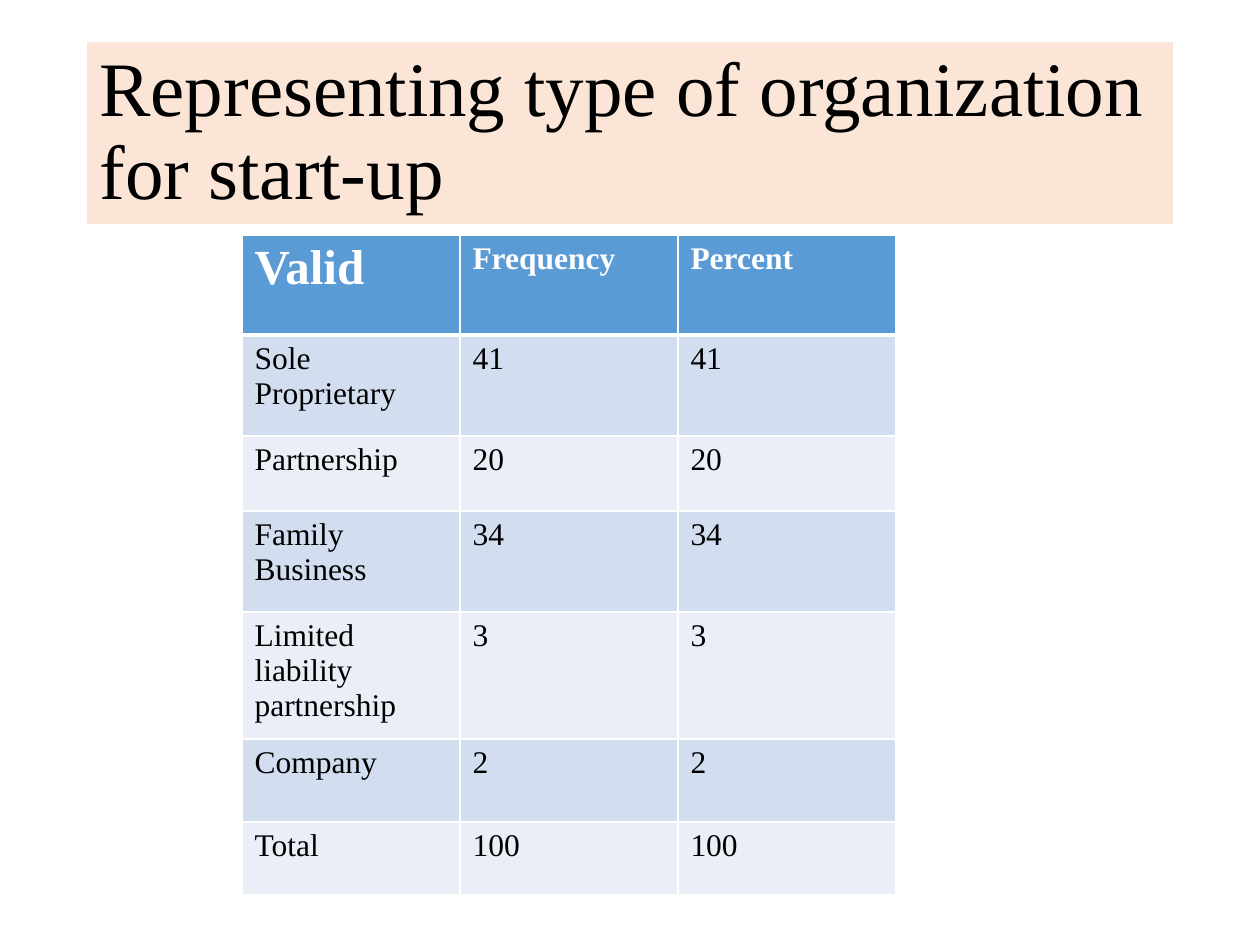
from dataclasses import dataclass

from lxml import etree
from pptx import Presentation
from pptx import util as u
from pptx.dml.color import RGBColor
from pptx.enum import text
from pptx.oxml.ns import qn

PX = u.Inches(1) / 126  # one px in EMU
FONT = "Times New Roman"
BLACK = RGBColor(0x00, 0x00, 0x00)
WHITE = RGBColor(0xFF, 0xFF, 0xFF)
PEACH = RGBColor(0xFB, 0xE5, 0xD6)
BLUE = RGBColor(0x5B, 0x9B, 0xD5)
BANDS = (RGBColor(0xD2, 0xDE, 0xEF), RGBColor(0xEA, 0xEF, 0xF7))

COLUMN_WIDTH = 218


@dataclass(frozen=True)
class Row:
    height: int
    labels: tuple[str, str, str]


ROWS = (
    Row(100, ("Valid", "Frequency", "Percent")),
    Row(101, ("Sole Proprietary", "41", "41")),
    Row(75, ("Partnership", "20", "20")),
    Row(101, ("Family Business", "34", "34")),
    Row(127, ("Limited liability partnership", "3", "3")),
    Row(83, ("Company", "2", "2")),
    Row(73, ("Total", "100", "100")),
)


def px(length: int) -> u.Emu:
    return u.Emu(round(length * PX))


def format_paragraph(paragraph, size: int, color: RGBColor, bold: bool = False) -> None:
    font = paragraph.font
    font.name, font.size, font.bold = FONT, u.Pt(size), bold
    font.color.rgb = color


def add_borders(cell, bottom: int) -> None:
    """Give a cell white rules, with its own bottom width in points."""
    properties = cell._tc.get_or_add_tcPr()
    widths = {"a:lnL": 1, "a:lnR": 1, "a:lnT": 1, "a:lnB": bottom}
    for index, (tag, width) in enumerate(widths.items()):
        line = etree.Element(qn(tag), w=str(u.Pt(width)))
        fill = etree.SubElement(line, qn("a:solidFill"))
        etree.SubElement(fill, qn("a:srgbClr"), val=str(WHITE))
        properties.insert(index, line)


def add_title(slide, wording: str) -> None:
    title = slide.shapes.title
    title.left, title.top, title.width, title.height = map(px, (87, 42, 1086, 182))
    title.fill.solid()
    title.fill.fore_color.rgb = PEACH
    frame = title.text_frame
    frame.text = wording
    frame.word_wrap = True
    frame.auto_size = text.MSO_AUTO_SIZE.NONE
    frame.vertical_anchor = text.MSO_ANCHOR.MIDDLE
    paragraph = frame.paragraphs[0]
    paragraph.alignment = text.PP_ALIGN.LEFT
    paragraph.line_spacing = 0.9
    format_paragraph(paragraph, 44, BLACK)


def add_frequencies(slide, rows: tuple[Row, ...]) -> None:
    columns = len(rows[0].labels)
    height = sum(row.height for row in rows)
    table = slide.shapes.add_table(
        len(rows), columns, px(242), px(235), px(columns * COLUMN_WIDTH), px(height)
    ).table
    for column in table.columns:
        column.width = px(COLUMN_WIDTH)
    for r, row in enumerate(rows):
        table.rows[r].height = px(row.height)
        header = r == 0
        for c, label in enumerate(row.labels):
            cell = table.cell(r, c)
            cell.text = label
            cell.fill.solid()
            cell.fill.fore_color.rgb = BLUE if header else BANDS[(r - 1) % 2]
            add_borders(cell, bottom=3 if header else 1)
            format_paragraph(
                cell.text_frame.paragraphs[0],
                size=28 if header and c == 0 else 18,
                color=WHITE if header else BLACK,
                bold=header,
            )


def main() -> None:
    deck = Presentation()
    deck.slide_width, deck.slide_height = u.Inches(10), u.Inches(7.5)
    slide = deck.slides.add_slide(deck.slide_layouts[5])  # title only
    add_title(slide, "Representing type of organization for start-up")
    add_frequencies(slide, ROWS)
    deck.save("out.pptx")


if __name__ == "__main__":
    main()
